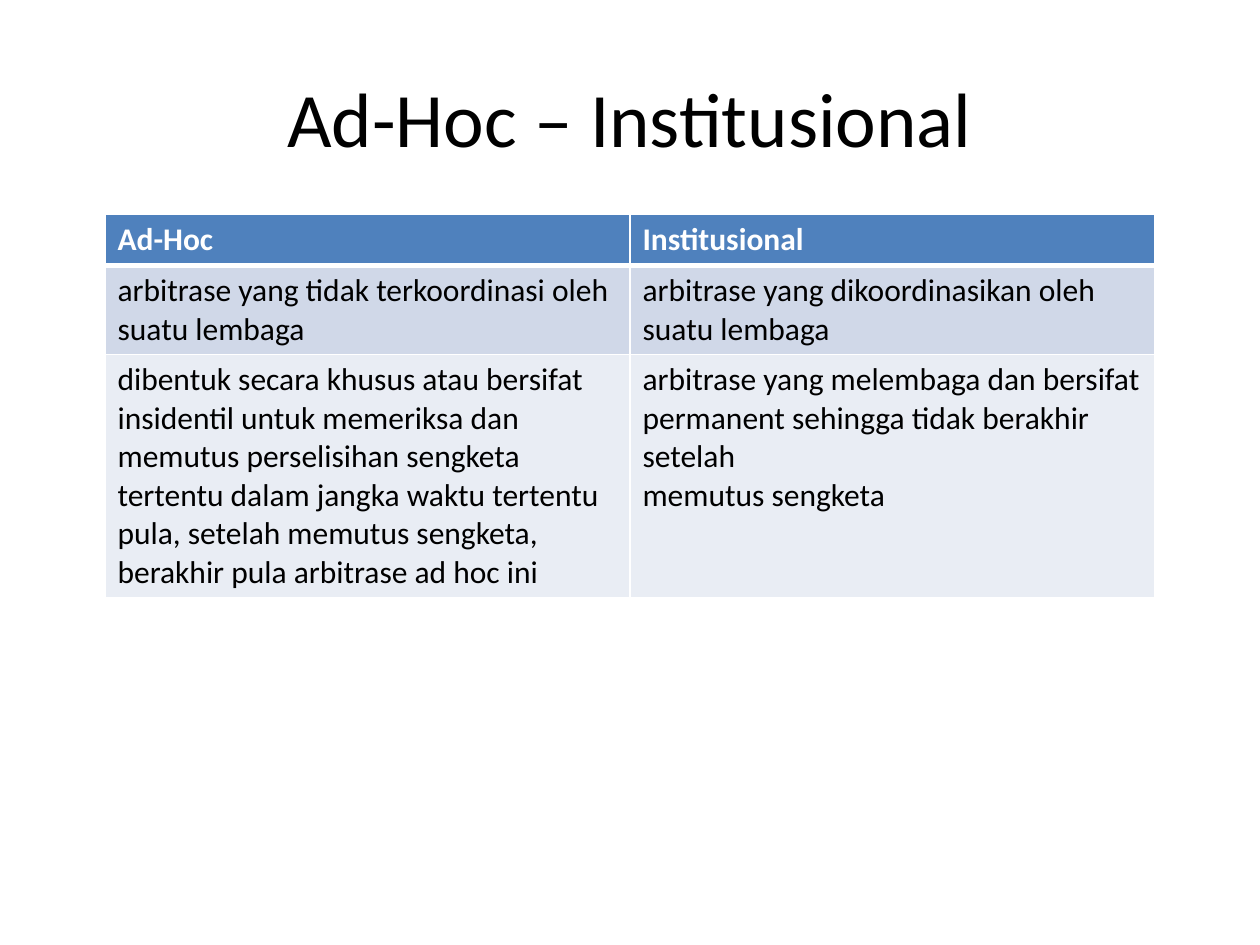
from dataclasses import dataclass

from lxml import etree
from pptx import Presentation
from pptx.dml.color import RGBColor
from pptx.enum import text
from pptx.oxml import ns
from pptx.util import Pt


@dataclass(frozen=True)
class Theme:
    font: str = "Calibri"
    title_size: int = 44
    body_size: int = 18
    ink: str = "000000"
    header_ink: str = "FFFFFF"
    header_fill: str = "4F81BD"
    bands: tuple = ("D0D8E8", "E9EDF4")
    rule: str = "FFFFFF"
    thin_rule: int = 1
    thick_rule: int = 3


class SlideBuilder:
    def __init__(self, slide, theme):
        self.slide = slide
        self.theme = theme

    def style(self, paragraph, size, color, bold=False):
        font = paragraph.font
        font.name = self.theme.font
        font.size = Pt(size)
        font.bold = bold
        font.color.rgb = RGBColor.from_string(color)

    def title(self, wording, left, top, width, height):
        box = self.slide.shapes.add_textbox(Pt(left), Pt(top), Pt(width), Pt(height))
        frame = box.text_frame
        frame.word_wrap = True
        frame.vertical_anchor = text.MSO_ANCHOR.MIDDLE
        frame.text = wording
        paragraph = frame.paragraphs[0]
        paragraph.alignment = text.PP_ALIGN.CENTER
        self.style(paragraph, self.theme.title_size, self.theme.ink)

    def borders(self, cell, row):
        """Rule every side, with a thick rule below the header row."""
        theme = self.theme
        properties = cell._tc.get_or_add_tcPr()
        thick_side = {0: "lnB", 1: "lnT"}.get(row)
        for side in ("lnL", "lnR", "lnT", "lnB"):
            width = theme.thick_rule if side == thick_side else theme.thin_rule
            line = etree.SubElement(properties, ns.qn(f"a:{side}"), w=str(Pt(width)))
            fill = etree.SubElement(line, ns.qn("a:solidFill"))
            etree.SubElement(fill, ns.qn("a:srgbClr"), val=theme.rule)

    def cell(self, cell, wording, row):
        theme = self.theme
        header = row == 0
        color = theme.header_fill if header else theme.bands[(row - 1) % 2]
        self.borders(cell, row)
        cell.fill.solid()
        cell.fill.fore_color.rgb = RGBColor.from_string(color)
        cell.text = wording
        for paragraph in cell.text_frame.paragraphs:
            self.style(paragraph, theme.body_size,
                       theme.header_ink if header else theme.ink, header)

    def table(self, rows, left, top, width, heights):
        frame = self.slide.shapes.add_table(
            len(rows), len(rows[0]), Pt(left), Pt(top), Pt(width), Pt(sum(heights)))
        table = frame.table
        for row, (wordings, height) in enumerate(zip(rows, heights)):
            table.rows[row].height = Pt(height)
            for column, wording in enumerate(wordings):
                self.cell(table.cell(row, column), wording, row)


ROWS = [
    ("Ad-Hoc", "Institusional"),
    ("arbitrase yang tidak terkoordinasi oleh suatu lembaga",
     "arbitrase yang dikoordinasikan oleh suatu lembaga"),
    ("dibentuk secara khusus atau bersifat insidentil untuk memeriksa dan memutus "
     "perselisihan sengketa tertentu dalam jangka waktu tertentu pula, setelah memutus "
     "sengketa, berakhir pula arbitrase ad hoc ini",
     "arbitrase yang melembaga dan bersifat permanent sehingga tidak berakhir setelah\n"
     "memutus sengketa"),
]


def main():
    presentation = Presentation()
    presentation.slide_width = Pt(720)
    presentation.slide_height = Pt(540)
    slide = presentation.slides.add_slide(presentation.slide_layouts[6])
    builder = SlideBuilder(slide, Theme())
    builder.title("Ad-Hoc – Institusional", left=36, top=21.6, width=648, height=90)
    builder.table(ROWS, left=60, top=122.4, width=600, heights=(29.2, 51.1, 139))
    presentation.save("out.pptx")


if __name__ == "__main__":
    main()
